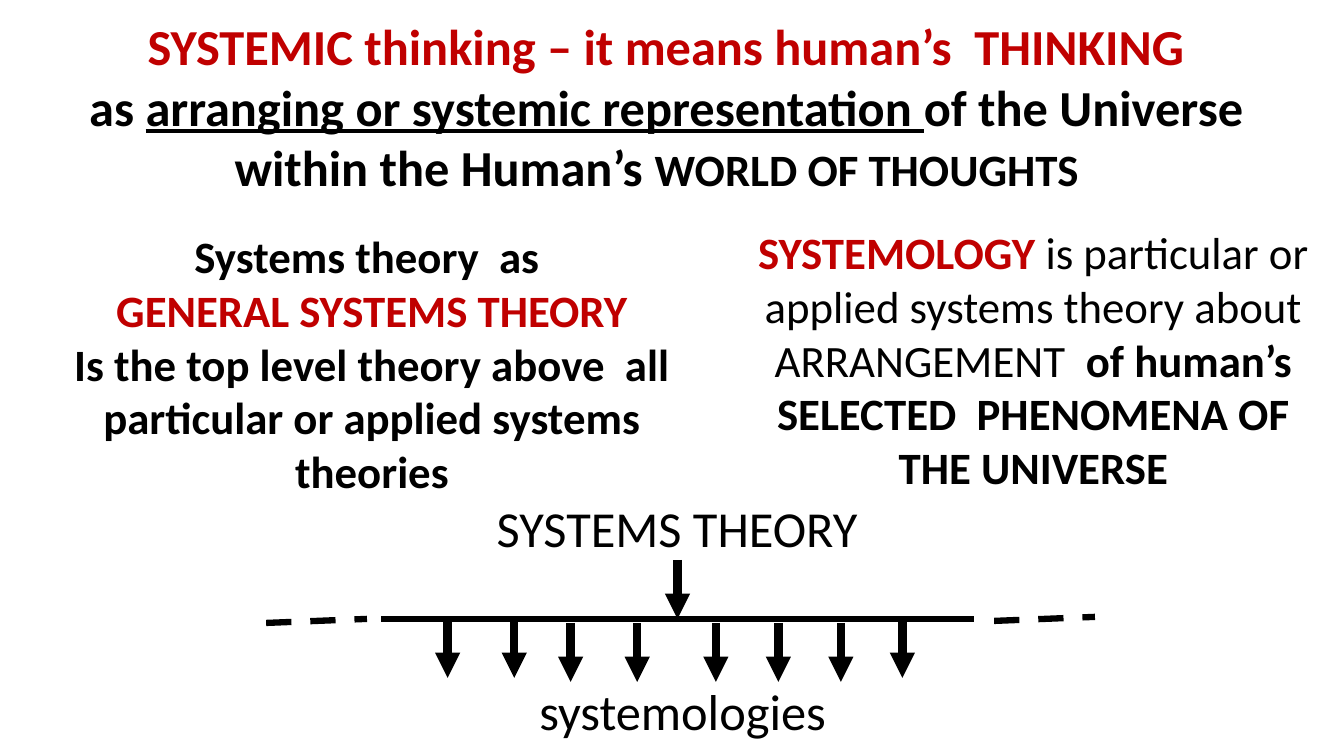
from lxml.etree import SubElement
from pptx import Presentation
from pptx.dml.color import RGBColor
from pptx.enum.dml import MSO_LINE
from pptx.enum.shapes import MSO_CONNECTOR
from pptx.enum.text import MSO_ANCHOR, MSO_AUTO_SIZE, PP_ALIGN
from pptx.oxml.ns import qn
from pptx.util import Inches, Pt

BLACK, RED = "000000", "C00000"
BOLD, PLAIN, UNDERLINED = "bold", "plain", "underlined"

HEADING = [
    [("SYSTEMIC thinking – it means human’s  THINKING ", 36, RED, BOLD)],
    [("as ", 36, BLACK, BOLD),
     ("arranging or systemic representation ", 36, BLACK, UNDERLINED),
     ("of the Universe ", 36, BLACK, BOLD)],
    [("within the Human’s ", 36, BLACK, BOLD),
     ("WORLD OF THOUGHTS   ", 32, BLACK, BOLD)],
]
GENERAL_THEORY = [
    [("Systems theory  as ", 32, BLACK, BOLD)],
    [("GENERAL SYSTEMS THEORY", 32, RED, BOLD)],
    [("Is the top level theory above  all particular or applied systems theories",
      32, BLACK, BOLD)],
]
SYSTEMOLOGY = [
    [("SYSTEMOLOGY", 32, RED, BOLD),
     (" is particular or applied systems theory about ARRANGEMENT  ", 32, BLACK, PLAIN),
     ("of human’s SELECTED  PHENOMENA OF THE UNIVERSE", 32, BLACK, BOLD)],
]
DIAGRAM_LABELS = [
    [("SYSTEMS THEORY", 36, BLACK, PLAIN)],
    [(" systemologies", 36, BLACK, PLAIN)],
]
LABEL_GAP = 88

BAR_LEFT, BAR_RIGHT, BAR_TOP = 3.78, 9.66, 6.14
ARROW_LENGTH = 0.585
DROP = 0.04
OUTER_BRANCHES = [4.44, 5.1, 8.95]
INNER_BRANCHES = [5.66, 6.32, 7.1, 7.72, 8.34]
DASHES = [(2.64, BAR_TOP + DROP), (9.86, BAR_TOP + 0.02)]


def color(hex_string):
    return RGBColor.from_string(hex_string)


def write(shape, area, paragraphs, gap=0):
    shape.left, shape.top, shape.width, shape.height = map(Inches, area)
    frame = shape.text_frame
    frame.word_wrap = True
    frame.auto_size = MSO_AUTO_SIZE.NONE
    frame.vertical_anchor = MSO_ANCHOR.TOP
    for index, runs in enumerate(paragraphs):
        para = frame.add_paragraph() if index else frame.paragraphs[0]
        para.alignment = PP_ALIGN.CENTER
        para.line_spacing = 1.0
        para.space_before = Pt(gap if index else 0)
        para.space_after = Pt(0)
        properties = para._p.get_or_add_pPr()
        properties.set("marL", "0")
        properties.set("indent", "0")
        SubElement(properties, qn("a:buNone"))
        for text, size, hue, style in runs:
            span = para.add_run()
            span.text = text
            span.font.name = "Calibri"
            span.font.size = Pt(size)
            span.font.color.rgb = color(hue)
            span.font.bold = style != PLAIN
            span.font.underline = style == UNDERLINED


def draw_line(page, start, end, width, arrow=False, dashed=False):
    line = page.shapes.add_connector(
        MSO_CONNECTOR.STRAIGHT, *map(Inches, (*start, *end)))
    line.line.color.rgb = color(BLACK)
    line.line.width = Pt(width)
    if dashed:
        line.line.dash_style = MSO_LINE.DASH
    if arrow:
        SubElement(line.line._get_or_add_ln(), qn("a:tailEnd"), type="triangle")
    SubElement(line._element.spPr, qn("a:effectLst"))


def draw_arrow(page, x, top):
    draw_line(page, (x, top), (x, top + ARROW_LENGTH), 6, arrow=True)


def main():
    deck = Presentation()
    deck.slide_width, deck.slide_height = Inches(13.33), Inches(7.5)
    page = deck.slides.add_slide(deck.slide_layouts.get_by_name("Two Content"))
    title, left_body, right_body = page.placeholders

    write(title, (0.14, 0.1, 13.05, 1.92), HEADING)
    write(left_body, (0.33, 2.22, 6.72, 2.79), GENERAL_THEORY)
    write(right_body, (7.31, 2.18, 5.88, 2.79), SYSTEMOLOGY)
    labels = page.shapes.add_textbox(0, 0, 0, 0)
    write(labels, (4.5, 4.88, 4.43, 2.52), DIAGRAM_LABELS, LABEL_GAP)

    draw_line(page, (BAR_LEFT, BAR_TOP), (BAR_RIGHT, BAR_TOP), 4.5)
    draw_arrow(page, (BAR_LEFT + BAR_RIGHT) / 2, BAR_TOP - ARROW_LENGTH)
    for x in OUTER_BRANCHES:
        draw_arrow(page, x, BAR_TOP)
    for x in INNER_BRANCHES:
        draw_arrow(page, x, BAR_TOP + DROP)
    for x, y in DASHES:
        draw_line(page, (x, y), (x + 1, y - DROP), 4.5, dashed=True)

    deck.save("out.pptx")


if __name__ == "__main__":
    main()
